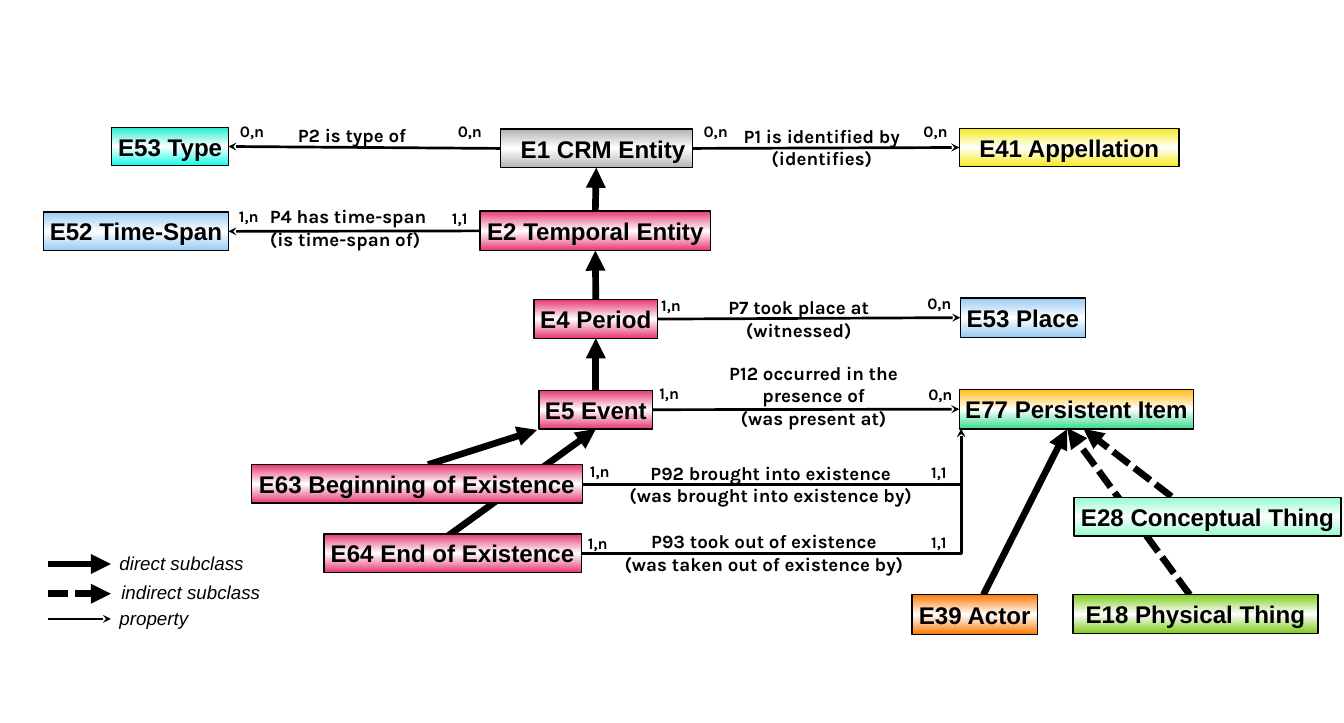
import copy

import pptx
import pptx.dml.color
import pptx.enum.dml
import pptx.enum.shapes
import pptx.enum.text
import pptx.oxml
import pptx.oxml.ns
import pptx.util

Inches = pptx.util.Inches
Pt = pptx.util.Pt
RGBColor = pptx.dml.color.RGBColor
Align = pptx.enum.text.PP_ALIGN
Link = pptx.enum.shapes.MSO_CONNECTOR

BLACK = RGBColor(0x00, 0x00, 0x00)
WHITE = RGBColor(0xFF, 0xFF, 0xFF)
PINK = RGBColor(0xE5, 0x37, 0x75)
BLUE = RGBColor(0x97, 0xC9, 0xF3)
GRAY = RGBColor(0xB3, 0xB3, 0xB3)
YELLOW = RGBColor(0xF5, 0xEB, 0x1B)
ORANGE = RGBColor(0xFC, 0x7A, 0x04)
AMBER = RGBColor(0xFF, 0xBB, 0x11)
GREEN = RGBColor(0x35, 0xDB, 0x90)
LIME = RGBColor(0x81, 0xCC, 0x1E)
MINT = RGBColor(0x93, 0xFB, 0xCC)
TEAL = RGBColor(0x20, 0xEC, 0xCF)
AQUA = RGBColor(0x11, 0xFB, 0xEA)

TOP, LEFT, BOTTOM, RIGHT = range(4)

# key: text, left, top, width, height, top colour, bottom colour
BOXES = {
    "actor": ("E39 Actor", 9.46, 6.17, 1.3, 0.41, ORANGE, ORANGE),
    "type": ("E53 Type", 1.16, 1.32, 1.21, 0.4, TEAL, AQUA),
    "place": ("E53 Place", 9.96, 3.09, 1.3, 0.41, BLUE, BLUE),
    "name": ("E41 Appellation", 9.95, 1.33, 2.28, 0.4, YELLOW, YELLOW),
    "event": ("E5 Event", 5.59, 4.05, 1.18, 0.4, PINK, PINK),
    "physical": ("E18 Physical Thing", 11.13, 6.17, 2.54, 0.4, LIME, LIME),
    "entity": ("E1 CRM Entity", 5.19, 1.34, 1.99, 0.4, GRAY, GRAY),
    "span": ("E52 Time-Span", 0.45, 2.2, 1.92, 0.4, BLUE, BLUE),
    "temporal": ("E2 Temporal Entity", 4.98, 2.19, 2.39, 0.41, PINK, PINK),
    "item": ("E77 Persistent Item", 9.95, 4.04, 2.43, 0.41, AMBER, GREEN),
    "period": ("E4 Period", 5.54, 3.11, 1.28, 0.4, PINK, PINK),
    "concept": ("E28 Conceptual Thing", 11.14, 5.16, 2.77, 0.4, MINT, MINT),
    "begin": ("E63 Beginning of Existence", 2.61, 4.82, 3.43, 0.4, PINK, PINK),
    "end": ("E64 End of Existence", 3.36, 5.54, 2.67, 0.4, PINK, PINK),
}

PARENTS = [("temporal", "entity"), ("period", "temporal"), ("event", "period")]

# from, side, to, side
PROPS = [
    ("entity", LEFT, "type", RIGHT),
    ("entity", RIGHT, "name", LEFT),
    ("temporal", LEFT, "span", RIGHT),
    ("period", RIGHT, "place", LEFT),
    ("event", RIGHT, "item", LEFT),
]

# lines, left, top, width, height, alignment
LABELS = [
    (["P2 is type of"], 2.99, 1.23, 1.59, 0.34, Align.LEFT),
    (["P1 is identified by", "(identifies)"], 7.54, 1.24, 1.97, 0.57, Align.CENTER),
    (["P4 has time-span", "(is time-span of)"], 2.7, 2.08, 2.45, 0.57, Align.LEFT),
    (["P7 took place at", "(witnessed)"], 7.38, 3.02, 1.81, 0.57, Align.CENTER),
    (["P12 occurred in the presence of", "(was present at)"],
     7.36, 3.7, 2.16, 0.81, Align.CENTER),
    (["P92 brought into existence", "(was brought into existence by)"],
     6.24, 4.74, 3.51, 0.57, Align.CENTER),
    (["P93 took out of existence", "(was taken out of existence by)"],
     6.24, 5.45, 3.37, 0.57, Align.CENTER),
]

COUNTS = {
    "0,n": [(9.48, 1.21), (7.2, 1.21), (2.39, 1.21), (4.65, 1.21),
            (9.53, 3.94), (9.52, 2.99)],
    "1,n": [(2.38, 2.09), (6.76, 3.02), (6.74, 3.93), (6.02, 4.74), (6, 5.48)],
    "1,1": [(4.59, 2.11), (9.56, 4.75), (9.56, 5.47)],
}


def write(shape, lines, font="Karla", size=14, bold=True, italic=False,
          align=Align.LEFT, wrap=True, pad=0.1):
    frame = shape.text_frame
    frame.word_wrap = wrap
    frame.margin_left = frame.margin_right = Inches(pad)
    frame.margin_top = frame.margin_bottom = Inches(0.05)
    frame.text = "\n".join(lines)
    for para in frame.paragraphs:
        para.alignment = align
        face = para.runs[0].font
        face.name, face.size = font, Pt(size)
        face.bold, face.italic = bold, italic
        face.color.rgb = BLACK


def label(slide, lines, left, top, width, height, **look):
    area = slide.shapes.add_textbox(
        Inches(left), Inches(top), Inches(width), Inches(height))
    write(area, lines, **look)


def shade(fill, colors):
    """Fill from top to bottom through evenly spaced colours."""
    fill.gradient()
    fill.gradient_angle = 270
    stops = fill._xPr.find(".//" + pptx.oxml.ns.qn("a:gsLst"))
    while len(stops) < len(colors):
        stops.append(copy.deepcopy(stops[-1]))
    for i, (stop, color) in enumerate(zip(fill.gradient_stops, colors)):
        stop.position = i / (len(colors) - 1)
        stop.color.rgb = color


def add_box(slide, text, left, top, width, height, upper, lower):
    box = slide.shapes.add_shape(
        pptx.enum.shapes.MSO_SHAPE.RECTANGLE,
        Inches(left), Inches(top), Inches(width), Inches(height))
    box.shadow.inherit = False
    shade(box.fill, [upper, WHITE, lower])
    box.line.color.rgb = BLACK
    box.line.width = Pt(1)
    write(box, [text], font="Arial", size=18, align=Align.CENTER,
          wrap=False, pad=0.06)
    return box


def arrow(slide, start=(0, 0), end=(1, 1), width=5, head="triangle",
          dash=False, kind=Link.STRAIGHT):
    link = slide.shapes.add_connector(
        kind, *(Inches(value) for value in (*start, *end)))
    link.line.color.rgb = BLACK
    link.line.width = Pt(width)
    if dash:
        link.line.dash_style = pptx.enum.dml.MSO_LINE.SQUARE_DOT
    tip = pptx.oxml.parse_xml(
        f'<a:tailEnd {pptx.oxml.ns.nsdecls("a")} type="{head}"/>')
    link.line._get_or_add_ln().append(tip)
    link._element.spPr.append(pptx.oxml.parse_xml(
        f'<a:effectLst {pptx.oxml.ns.nsdecls("a")}/>'))
    return link


def join(slide, source, side, target, face, **look):
    link = arrow(slide, **look)
    link.begin_connect(source, side)
    link.end_connect(target, face)


def elbow(slide, start, end, **look):
    """Run level from start, then turn once to reach end."""
    link = arrow(slide, start, end, kind=Link.ELBOW, **look)
    shape = link._element.spPr.find(pptx.oxml.ns.qn("a:prstGeom"))
    shape.set("prst", "bentConnector2")


def add_key(slide, thin):
    rows = [("direct subclass", 1.14, 5.67, 5.85, {}),
            ("indirect subclass", 1.16, 5.98, 6.16, {"dash": True}),
            ("property", 1.14, 6.25, 6.42, thin)]
    for text, left, top, level, look in rows:
        arrow(slide, (0.5, level), (1.15, level), **look)
        label(slide, [text], left, top, 1.65, 0.34, font="Arial",
              bold=False, italic=True)


def main():
    deck = pptx.Presentation()
    deck.slide_width, deck.slide_height = Inches(13.94), Inches(7.5)
    slide = deck.slides.add_slide(deck.slide_layouts[6])
    thin = {"width": 2, "head": "stealth"}

    arrow(slide, (12.34, 6.17), (11.07, 4.44), dash=True)
    arrow(slide, (4.44, 4.82), (5.57, 4.46))
    ending = arrow(slide, (4.59, 5.6), (6.18, 4.46))
    arrow(slide, (10.2, 6.17), (11.07, 4.45))
    arrow(slide, (12.15, 5.15), (11.24, 4.45), dash=True)

    boxes = {key: add_box(slide, *row) for key, row in BOXES.items()}
    boxes["entity"].text_frame.margin_left = Inches(0.2)
    ending.end_connect(boxes["event"], BOTTOM)

    for child, parent in PARENTS:
        join(slide, boxes[child], TOP, boxes[parent], BOTTOM)
    for source, side, target, face in PROPS:
        join(slide, boxes[source], side, boxes[target], face, **thin)
    for start in [(6.04, 5.03), (6.03, 5.74)]:
        elbow(slide, start, (9.97, 4.45), **thin)

    for lines, left, top, width, height, align in LABELS:
        label(slide, lines, left, top, width, height, align=align)
    for text, spots in COUNTS.items():
        for left, top in spots:
            label(slide, [text], left, top, 0.54, 0.3, size=12)
    add_key(slide, thin)
    deck.save("out.pptx")


if __name__ == "__main__":
    main()
